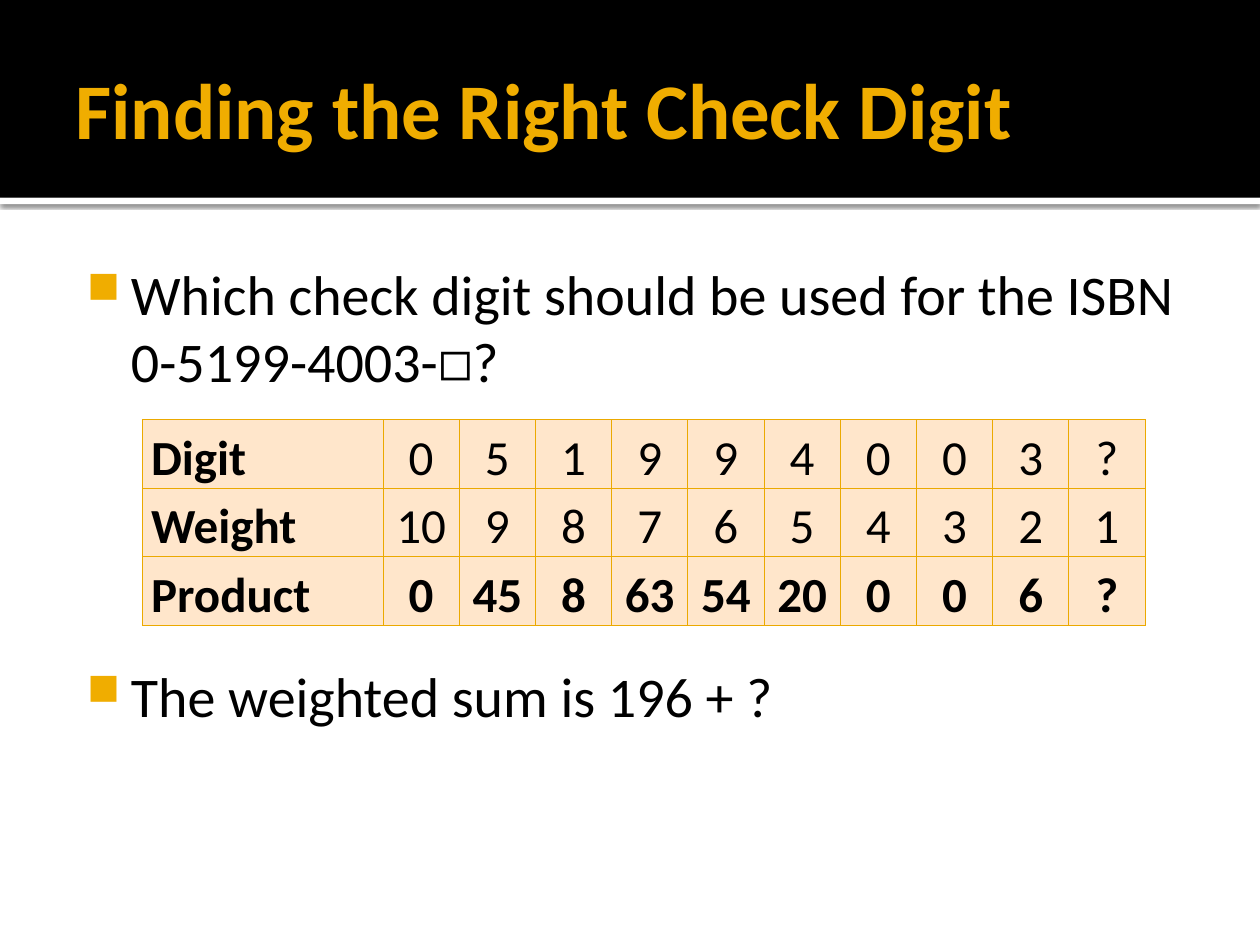
import pptx
import pptx.dml.color
import pptx.enum.shapes
import pptx.enum.text
import pptx.oxml
import pptx.oxml.ns
import pptx.util

Inches, Pt = pptx.util.Inches, pptx.util.Pt
GOLD, BLACK, WHITE, PEACH, BORDER = "F0AD00", "000000", "FFFFFF", "FFE6CB", "EBA900"
BAND_HEIGHT = 1.57


def color(value):
    return pptx.dml.color.RGBColor.from_string(value)


def add_xml(parent, markup):
    """Append DrawingML written with the a: prefix."""
    tag_end = min(markup.index(mark) for mark in " >/" if mark in markup)
    namespace = " " + pptx.oxml.ns.nsdecls("a")
    parent.append(pptx.oxml.parse_xml(markup[:tag_end] + namespace + markup[tag_end:]))


presentation = pptx.Presentation()
presentation.slide_width, presentation.slide_height = Inches(10), Inches(7.5)
slide = presentation.slides.add_slide(presentation.slide_layouts[5])
title = slide.shapes.title

# Header band with a shadowed white rule, both behind the title
for top, height, fill in ((BAND_HEIGHT, 0.05, WHITE), (0, BAND_HEIGHT, BLACK)):
    band = slide.shapes.add_shape(
        pptx.enum.shapes.MSO_SHAPE.RECTANGLE,
        0, Inches(top), presentation.slide_width, Inches(height))
    band.shadow.inherit = False
    band.fill.solid()
    band.fill.fore_color.rgb = color(fill)
    band.line.fill.background()
    title._element.addprevious(band._element)
    if fill == WHITE:
        effects = band._element.spPr.find(pptx.oxml.ns.qn("a:effectLst"))
        add_xml(effects, '<a:outerShdw blurRad="31750" dist="10160" dir="5400000">'
                         f'<a:srgbClr val="{BLACK}"><a:alpha val="60000"/></a:srgbClr>'
                         '</a:outerShdw>')

# Title
title.left, title.top, title.width, title.height = map(Inches, (0.5, 0.17, 9, 1.37))
frame = title.text_frame
frame.text = "Finding the Right Check Digit"
frame.vertical_anchor = pptx.enum.text.MSO_ANCHOR.MIDDLE
frame.margin_left, frame.margin_right = Inches(0.1), Inches(0.05)
paragraph = frame.paragraphs[0]
paragraph.alignment = pptx.enum.text.PP_ALIGN.LEFT
font = paragraph.runs[0].font
font.name, font.size, font.bold = "Calibri", Pt(45), True
font.color.rgb = color(GOLD)

# Bullets, with a gap between them for the table
body = slide.shapes.add_textbox(*map(Inches, (0.5, 1.96, 9, 5.04)))
frame = body.text_frame
frame.word_wrap = True
frame.margin_left, frame.margin_top = Inches(0.06), Inches(0.1)
frame.text = ("Which check digit should be used for the ISBN 0-5199-4003-◻?\n"
              "The weighted sum is 196 + ?")
for paragraph, gap in zip(frame.paragraphs, (0, 153)):
    paragraph.space_before = Pt(gap)
    properties = paragraph._element.get_or_add_pPr()
    properties.set("marL", str(Inches(0.48)))
    properties.set("indent", str(Inches(-0.35)))
    add_xml(properties, f'<a:buClr><a:srgbClr val="{GOLD}"/></a:buClr>')
    add_xml(properties, '<a:buSzPct val="80000"/>')
    add_xml(properties, '<a:buChar char="■"/>')
    font = paragraph.runs[0].font
    font.name, font.size = "Calibri", Pt(32)
    font.color.rgb = color(BLACK)

# Table: each product is digit times weight
digits = [0, 5, 1, 9, 9, 4, 0, 0, 3]
weights = list(range(10, 0, -1))
products = [digit * weight for digit, weight in zip(digits, weights)]
rows = [["Digit", *digits, "?"], ["Weight", *weights], ["Product", *products, "?"]]

label_width, digit_width, row_height = 1.91, 0.605, 0.545
table = slide.shapes.add_table(
    len(rows), len(rows[0]), Inches(1.13), Inches(3.33),
    Inches(label_width + digit_width * len(weights)),
    Inches(row_height * len(rows))).table
for index, column in enumerate(table.columns):
    column.width = Inches(digit_width if index else label_width)

for row_index, values in enumerate(rows):
    table.rows[row_index].height = Inches(row_height)
    for column_index, value in enumerate(values):
        cell = table.cell(row_index, column_index)
        cell.margin_left = cell.margin_right = Inches(0.07)
        cell.margin_top = cell.margin_bottom = 0
        cell.text = str(value)
        paragraph = cell.text_frame.paragraphs[0]
        paragraph.line_spacing = 1.15
        if column_index:
            paragraph.alignment = pptx.enum.text.PP_ALIGN.CENTER
        font = paragraph.runs[0].font
        font.name, font.size = "Calibri", Pt(28)
        font.bold = column_index == 0 or values[0] == "Product"
        font.color.rgb = color(BLACK)
        properties = cell._tc.get_or_add_tcPr()
        for side in ("lnL", "lnR", "lnT", "lnB"):
            add_xml(properties, f'<a:{side} w="{Pt(0.5)}"><a:solidFill>'
                                f'<a:srgbClr val="{BORDER}"/></a:solidFill></a:{side}>')
        cell.fill.solid()
        cell.fill.fore_color.rgb = color(PEACH)

presentation.save("out.pptx")
